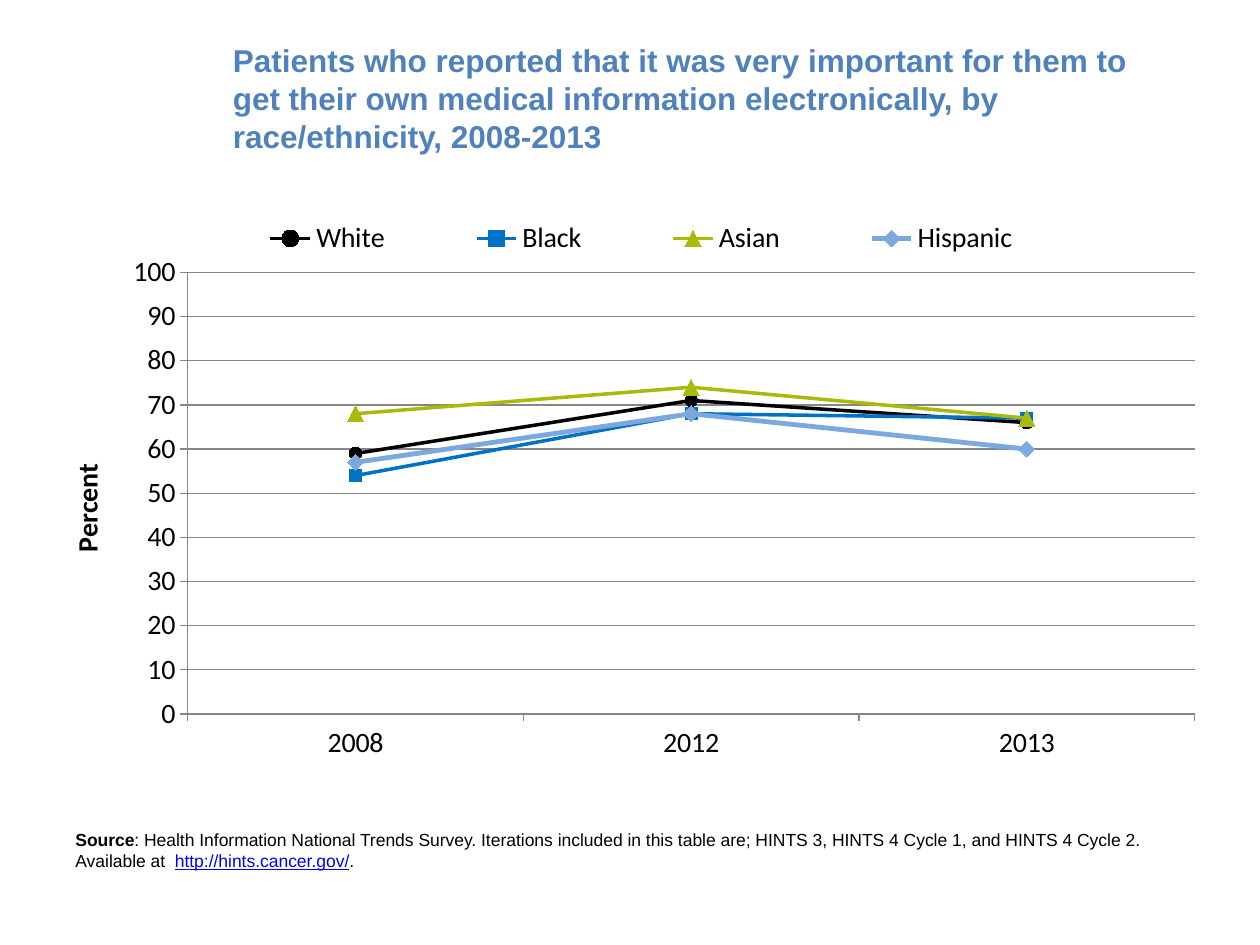
from lxml.etree import SubElement
from pptx import Presentation
from pptx.chart.data import CategoryChartData as Data
from pptx.dml.color import RGBColor as RGB
from pptx.enum.chart import XL_CHART_TYPE as Kind, XL_LEGEND_POSITION as Pos
from pptx.enum.chart import XL_MARKER_STYLE as Mark, XL_TICK_MARK as Tick
from pptx.enum.text import MSO_ANCHOR as Anchor
from pptx.oxml.ns import qn
from pptx.util import Pt

SCALE = 9144
BLACK = RGB(0x00, 0x00, 0x00)
STEEL = RGB(0x4F, 0x81, 0xBD)
BLUE = RGB(0x00, 0x72, 0xC6)
OLIVE = RGB(0xAA, 0xBA, 0x0A)
SKY = RGB(0x7B, 0xA8, 0xDF)
LINK = RGB(0x00, 0x00, 0xFF)
GRAY = RGB(0x86, 0x86, 0x86)

YEARS = ["2008", "2012", "2013"]
SERIES = [
    ("White", (59, 71, 66), BLACK, 2, Mark.CIRCLE, 7),
    ("Black", (54, 68, 67), BLUE, 2, Mark.SQUARE, 7),
    ("Asian", (68, 74, 67), OLIVE, 2, Mark.TRIANGLE, 9),
    ("Hispanic", (57, 68, 60), SKY, 2.75, Mark.DIAMOND, 9),
]


def put(item, vals):
    for key, val in vals.items():
        setattr(item, key, val)


def style(font, color=BLACK, **vals):
    put(font, vals)
    font.color.rgb = color


def stroke(line, color, width):
    line.color.rgb = color
    line.width = Pt(width)


def place(part, box, inner=False):
    old = part.find(qn("c:layout"))
    if old is not None:
        part.remove(old)
    lay = SubElement(part, qn("c:layout"))
    part.remove(lay)
    part.insert(1 if part.tag == qn("c:legend") else 0, lay)
    man = SubElement(lay, qn("c:manualLayout"))
    tags = [("layoutTarget", "inner")] if inner else []
    tags += [("xMode", "edge"), ("yMode", "edge"), *zip("xywh", box)]
    for tag, val in tags:
        SubElement(man, qn("c:" + tag)).set("val", str(val))


class Deck:
    text = {"name": "Arial", "size": Pt(10), "bold": False}
    label = {"name": "Calibri", "size": Pt(16), "bold": False}

    def __init__(self, wide, high):
        self.show = Presentation()
        put(self.show, {"slide_width": wide * SCALE, "slide_height": high * SCALE})
        self.slide = self.show.slides.add_slide(self.show.slide_layouts[6])

    def note(self, box, runs, anchor=Anchor.TOP):
        frame = self.slide.shapes.add_textbox(*(n * SCALE for n in box)).text_frame
        put(frame, {"word_wrap": True, "vertical_anchor": anchor})
        for words, form in runs:
            run = frame.paragraphs[0].add_run()
            run.text = words
            style(run.font, **{**self.text, **form})

    def chart(self, box, years, rows):
        data = Data(number_format="0")
        data.categories = years
        for name, vals, *_ in rows:
            data.add_series(name, vals)
        chart = self.slide.shapes.add_chart(
            Kind.LINE_MARKERS, *(n * SCALE for n in box), data).chart
        style(chart.font, **self.text)
        put(chart, {"has_title": False, "has_legend": True})
        put(chart.legend, {"position": Pos.TOP, "include_in_layout": False})
        style(chart.legend.font, **self.label)
        place(chart.legend._element, (0.11, 0.03, 0.8, 0.07))
        place(chart.plots[0]._element.getparent(), (0.11, 0.125, 0.888, 0.779), True)
        chart.plots[0].vary_by_categories = False
        for line, row in zip(chart.plots[0].series, rows):
            self.trace(line, *row[2:])
        self.axes(chart.category_axis, chart.value_axis)

    def trace(self, line, color, width, mark, size):
        line.smooth = False
        stroke(line.format.line, color, width)
        put(line.marker, {"style": mark, "size": size})
        form = line.marker.format
        form.fill.solid()
        form.fill.fore_color.rgb = color
        form.line.color.rgb = color

    def axes(self, cat, val):
        for axis in (cat, val):
            put(axis, {"major_tick_mark": Tick.OUTSIDE, "minor_tick_mark": Tick.NONE})
            style(axis.tick_labels.font, **self.label)
            stroke(axis.format.line, GRAY, 0.75)
        put(val, {"minimum_scale": 0, "maximum_scale": 100, "major_unit": 10,
                  "has_major_gridlines": True})
        put(val.tick_labels, {"number_format": "0", "number_format_is_linked": False})
        stroke(val.major_gridlines.format.line, GRAY, 0.75)
        frame = val.axis_title.text_frame
        frame.text = "Percent"
        style(frame.paragraphs[0].runs[0].font, **{**self.label, "bold": True})


def main():
    deck = Deck(1000, 750)
    deck.note((175, 30, 750, 95), [(
        "Patients who reported that it was very important for them to get their own "
        "medical information electronically, by race/ethnicity, 2008-2013",
        {"size": Pt(18), "bold": True, "color": STEEL})], Anchor.MIDDLE)
    deck.chart((50, 160, 900, 450), YEARS, SERIES)
    deck.note((50, 653, 908, 44), [
        ("Source", {"bold": True}),
        (": Health Information National Trends Survey. Iterations included in this "
         "table are; HINTS 3, HINTS 4 Cycle 1, and HINTS 4 Cycle 2. Available at  ", {}),
        ("http://hints.cancer.gov/", {"color": LINK, "underline": True}),
        (".", {})])
    deck.show.save("out.pptx")


if __name__ == "__main__":
    main()
